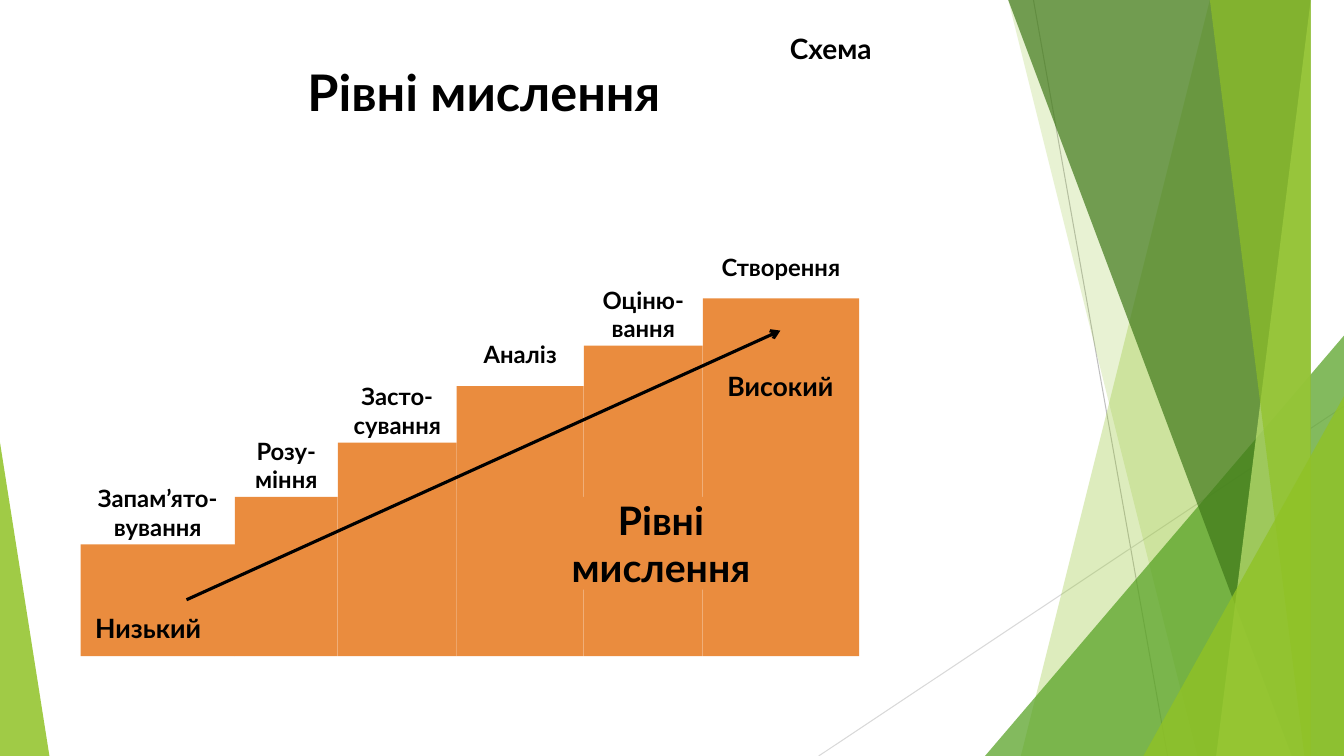
"""Build the slide on levels of thinking: a staircase of six steps with a rising arrow."""
from itertools import accumulate
from lxml.etree import SubElement
from pptx import Presentation
from pptx.dml.color import RGBColor
from pptx.enum.shapes import MSO_CONNECTOR, MSO_SHAPE
from pptx.enum.text import MSO_ANCHOR, PP_ALIGN
from pptx.oxml.ns import qn
from pptx.util import Inches, Pt

WIDE, HIGH = 13.33, 7.5
FONT = "Lato"
HUES = {
    "step": "EA8C3E", "ink": "000000", "lime": "90C226", "leaf": "54A021",
    "dark": "3F7819", "pale": "C0E474", "gray": "BFBFBF", "mist": "D9D9D9",
}

TITLE = ("Рівні мислення", (1.57, 0.47, 6.46, 0.87), 36)
LEFT, BASE, TALL = 0.8, 6.51, 0.63
STEPS = [
    ("Запам’ято-вування", 1.53, 5.4),
    ("Розу-\nміння", 1.02, 4.93),
    ("Засто-сування", 1.18, 4.39),
    ("Аналіз", 1.26, 3.83),
    ("Оціню-вання", 1.18, 3.43),
    ("Створення", 1.55, 2.96),
]
PATCH = ("Рівні мислення", (5.16, 4.93, 2.79, 0.92), 28)
NOTES = [
    ("Низький", (0.8, 5.95, 1.34, 0.55), 19),
    ("Високий", (7.07, 3.55, 1.34, 0.55), 19),
    ("Схема", (7.2, 0.16, 2.08, 0.63), 20),
]
ARROW = (1.85, 5.95, 7.74, 3.28)
RAYS = [
    ((10.25, 0, 11.58, HIGH), "gray"),
    ((WIDE, 4.03, 8.12, HIGH), "mist"),
]
DECOR = [
    ("band", 12.28, 10.04, "lime", 30),
    ("band", 10.5, 11.83, "lime", 20),
    ("peak", 9.77, 3.33, "leaf", 72),
    ("band", 10.21, 12.91, "dark", 70),
    ("band", 13.03, 11.92, "pale", 70),
    ("band", 11.96, 13.18, "lime", 65),
    ("peak", 11.34, 3.93, "lime", 80),
]
CORNER = (0, 4.39, 0.49, HIGH - 4.39)


def paint(shape, hue, alpha=100):
    shape.shadow.inherit = False
    shape.fill.solid()
    shape.fill.fore_color.rgb = RGBColor.from_string(HUES[hue])
    shape.line.fill.background()
    if alpha < 100:
        color = shape.fill._xPr.find(qn("a:solidFill"))[0]
        SubElement(color, qn("a:alpha")).set("val", str(alpha * 1000))


def block(shapes, kind, box, hue, alpha=100):
    shape = shapes.add_shape(kind, *map(Inches, box))
    paint(shape, hue, alpha)
    return shape


def line(shapes, ends, hue, width):
    link = shapes.add_connector(MSO_CONNECTOR.STRAIGHT, *map(Inches, ends))
    link.line.color.rgb = RGBColor.from_string(HUES[hue])
    link.line.width = Pt(width)
    SubElement(link._element.spPr, qn("a:effectLst"))
    return link


def write(shape, text, size):
    frame = shape.text_frame
    frame.text = text
    frame.word_wrap = True
    frame.vertical_anchor = MSO_ANCHOR.MIDDLE
    for para in frame.paragraphs:
        para.alignment = PP_ALIGN.CENTER
        for run in para.runs:
            run.font.name, run.font.size, run.font.bold = FONT, Pt(size), True
            run.font.color.rgb = RGBColor.from_string(HUES["ink"])


def label(shapes, text, box, size):
    write(shapes.add_textbox(*map(Inches, box)), text, size)


def backdrop(shapes):
    for ends, hue in RAYS:
        line(shapes, ends, hue, 0.75)
    for kind, one, two, hue, alpha in DECOR:
        if kind == "band":
            path = shapes.build_freeform(one, 0, scale=Inches(1))
            path.add_line_segments([(WIDE, 0), (WIDE, HIGH), (two, HIGH)])
            paint(path.convert_to_shape(), hue, alpha)
        else:
            box = (one, two, WIDE - one, HIGH - two)
            peak = block(shapes, MSO_SHAPE.ISOSCELES_TRIANGLE, box, hue, alpha)
            peak.adjustments[0] = 1
    edge = block(shapes, MSO_SHAPE.ISOSCELES_TRIANGLE, CORNER, "lime", 85)
    edge.adjustments[0] = 0


def stairs(shapes):
    lefts = accumulate((wide for _, wide, _ in STEPS), initial=LEFT)
    for left, (text, wide, top) in zip(lefts, STEPS):
        block(shapes, MSO_SHAPE.RECTANGLE, (left, top, wide, BASE - top), "step")
        label(shapes, text, (left, top - TALL, wide, TALL), 17)
    text, box, size = PATCH
    write(block(shapes, MSO_SHAPE.RECTANGLE, box, "step"), text, size)
    arrow = line(shapes, ARROW, "ink", 2.25)
    SubElement(arrow.line._get_or_add_ln(), qn("a:tailEnd")).set("type", "arrow")


def main():
    deck = Presentation()
    deck.slide_width, deck.slide_height = Inches(WIDE), Inches(HIGH)
    slide = deck.slides.add_slide(deck.slide_layouts[5])
    shapes = slide.shapes
    text, box, size = TITLE
    head = shapes.title
    head.left, head.top, head.width, head.height = map(Inches, box)
    write(head, text, size)
    backdrop(shapes)
    stairs(shapes)
    for note in NOTES:
        label(shapes, *note)
    deck.save("out.pptx")


if __name__ == "__main__":
    main()
